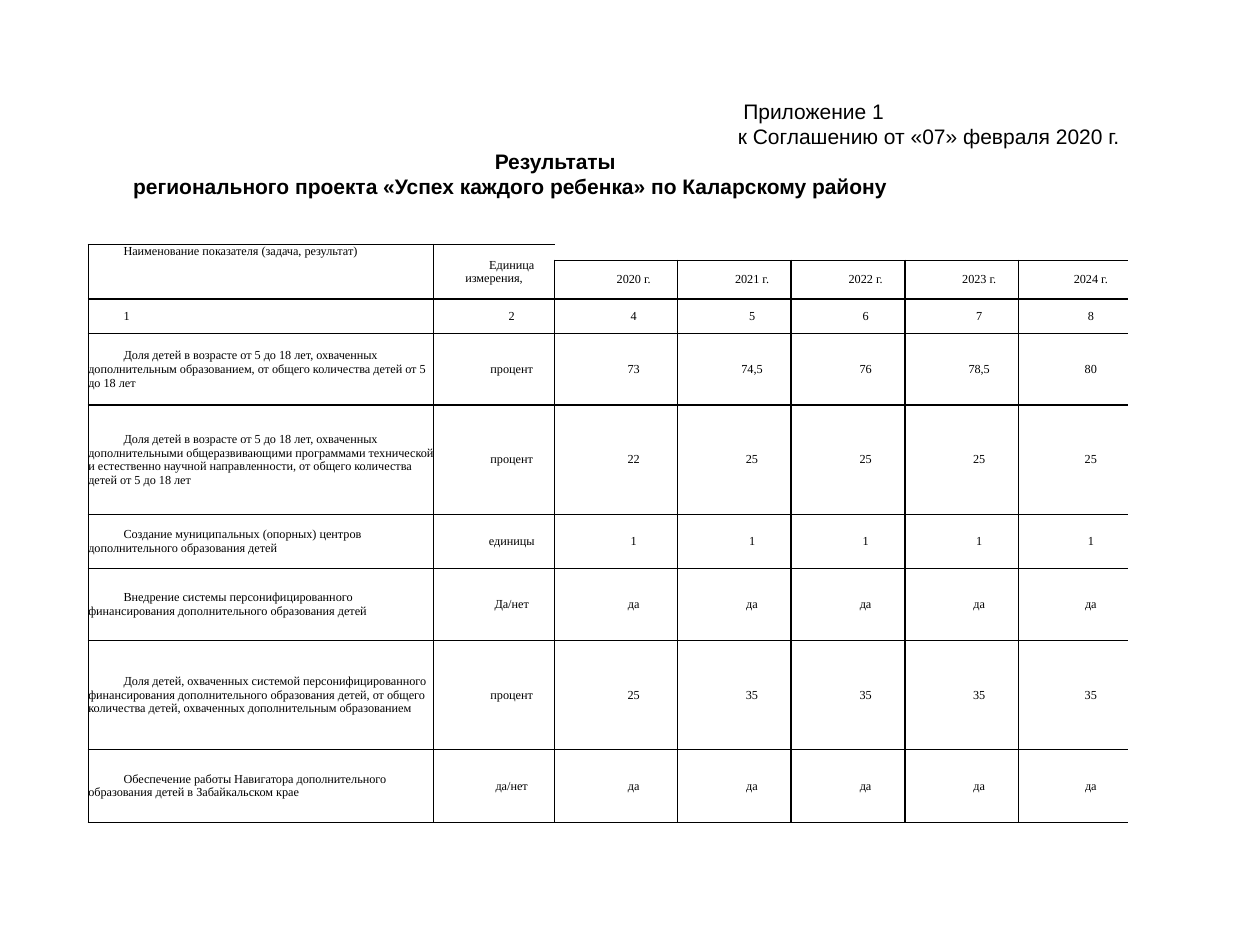
import lxml.etree
import pptx
import pptx.dml.color
import pptx.enum.text
import pptx.oxml.ns
import pptx.util

Cm = pptx.util.Cm
Pt = pptx.util.Pt
qn = pptx.oxml.ns.qn
ALIGN = pptx.enum.text.PP_ALIGN
ANCHOR = pptx.enum.text.MSO_ANCHOR

BLACK = pptx.dml.color.RGBColor(0x00, 0x00, 0x00)
WHITE = pptx.dml.color.RGBColor(0xFF, 0xFF, 0xFF)

# text, left indent in cm, bold
HEADING = [
    ("Приложение 1", 13.23, False),
    ("к Соглашению от «07» февраля 2020 г.", 13.12, False),
    ("Результаты", 8.22, True),
    ("регионального проекта «Успех каждого ребенка» по Каларскому району", 0.93, True),
]
COLUMNS = [6.96, 2.44, 2.48, 2.29, 2.29, 2.29, 2.21]
HEIGHTS = [0.32, 0.78, 0.69, 1.45, 2.2, 1.09, 1.45, 2.2, 1.47]
ROWS = [
    ["Наименование показателя (задача, результат)", "Единица измерения,"] + [""] * 5,
    ["", ""] + [f"{year} г." for year in range(2020, 2025)],
    ["1", "2", "4", "5", "6", "7", "8"],
    ["Доля детей в возрасте от 5 до 18 лет, охваченных дополнительным образованием, "
     "от общего количества детей от 5 до 18 лет",
     "процент", "73", "74,5", "76", "78,5", "80"],
    ["Доля детей в возрасте от 5 до 18 лет, охваченных дополнительными "
     "общеразвивающими программами технической и естественно научной направленности, "
     "от общего количества детей от 5 до 18 лет",
     "процент", "22", "25", "25", "25", "25"],
    ["Создание муниципальных (опорных) центров дополнительного образования детей",
     "единицы"] + ["1"] * 5,
    ["Внедрение системы персонифицированного финансирования дополнительного "
     "образования детей", "Да/нет"] + ["да"] * 5,
    ["Доля детей, охваченных системой персонифицированного финансирования "
     "дополнительного образования детей, от общего количества детей, охваченных "
     "дополнительным образованием",
     "процент", "25", "35", "35", "35", "35"],
    ["Обеспечение работы Навигатора дополнительного образования детей "
     "в Забайкальском крае", "да/нет"] + ["да"] * 5,
]


class Deck:
    heading_font, heading_size = "Arial", Pt(12)
    table_font, table_size = "Times New Roman", Pt(7)
    first_line = Cm(0.71)

    def __init__(self):
        self.prs = pptx.Presentation()
        self.prs.slide_width, self.prs.slide_height = Cm(25.4), Cm(19.05)
        self.s = self.prs.slides.add_slide(self.prs.slide_layouts[5])

    def format_run(self, r, name, size, bold=False):
        r.font.name, r.font.size, r.font.bold = name, size, bold
        r.font.color.rgb = BLACK

    def indent(self, p, left, first):
        pPr = p._p.get_or_add_pPr()
        pPr.set("marL", str(left))
        pPr.set("indent", str(first))

    def heading(self, lines, left, top, width, height):
        sp = self.s.shapes.title
        sp.left, sp.top, sp.width, sp.height = Cm(left), Cm(top), Cm(width), Cm(height)
        sp.fill.solid()
        sp.fill.fore_color.rgb = WHITE
        tf = sp.text_frame
        tf.auto_size = pptx.enum.text.MSO_AUTO_SIZE.NONE
        tf.vertical_anchor = ANCHOR.TOP
        tf.margin_top = Cm(1.7)
        tf.text = "\n".join(text for text, _, _ in lines)
        for p, (_, offset, bold) in zip(tf.paragraphs, lines):
            p.alignment = ALIGN.LEFT
            p.line_spacing = Pt(14.3)
            p.space_before = Pt(0)
            self.indent(p, Cm(offset), 0)
            self.format_run(p.runs[0], self.heading_font, self.heading_size, bold)

    def borders(self, cell, sides):
        """Draw the named sides (of "LRTB") in black and hide the others."""
        tcPr = cell._tc.get_or_add_tcPr()
        for i, side in enumerate("LRTB"):
            ln = lxml.etree.Element(qn("a:ln" + side), w=str(Pt(1)))
            if side in sides:
                fill = lxml.etree.SubElement(ln, qn("a:solidFill"))
                lxml.etree.SubElement(fill, qn("a:srgbClr"), val=str(BLACK))
            else:
                lxml.etree.SubElement(ln, qn("a:noFill"))
            tcPr.insert(i, ln)

    def cell(self, cell, text, alignment, anchor):
        cell.margin_left = cell.margin_right = cell.margin_top = cell.margin_bottom = 0
        cell.vertical_anchor = anchor
        cell.fill.solid()
        cell.fill.fore_color.rgb = WHITE
        cell.text = text
        p = cell.text_frame.paragraphs[0]
        p.alignment = alignment
        self.indent(p, 0, self.first_line)
        for r in p.runs:
            self.format_run(r, self.table_font, self.table_size)
        if not text:  # keeps empty cells from stretching their row
            lxml.etree.SubElement(p._p, qn("a:endParaRPr"),
                                  sz=str(int(self.table_size.pt * 100)))

    def table(self, rows, columns, heights, left, top):
        frame = self.s.shapes.add_table(len(rows), len(columns), Cm(left), Cm(top),
                                        Cm(sum(columns)), Cm(sum(heights)))
        table = frame.table
        table.first_row = table.horz_banding = False
        for column, width in zip(table.columns, columns):
            column.width = Cm(width)
        for row, height in zip(table.rows, heights):
            row.height = Cm(height)
        last = len(columns) - 1
        for i, row in enumerate(rows):
            for j, text in enumerate(row):
                cell = table.cell(i, j)
                self.cell(cell, text, ALIGN.LEFT if j == 0 else ALIGN.CENTER,
                          ANCHOR.TOP if i == j == 0 else ANCHOR.MIDDLE)
                if i == 0 and j > 1:
                    sides = "B"
                elif j == last or (i == 0 and j == 1):
                    sides = "LTB"
                else:
                    sides = "LRTB"
                self.borders(cell, sides)
        table.cell(0, 0).text_frame.paragraphs[0].space_before = Pt(6)
        for j in (0, 1):
            table.cell(0, j).merge(table.cell(1, j))
        table.cell(0, 2).merge(table.cell(0, last))


def main():
    deck = Deck()
    deck.heading(HEADING, 1.5, 0.28, 22.12, 4.62)
    deck.table(ROWS, COLUMNS, HEIGHTS, 1.78, 4.93)
    deck.prs.save("out.pptx")


if __name__ == "__main__":
    main()
